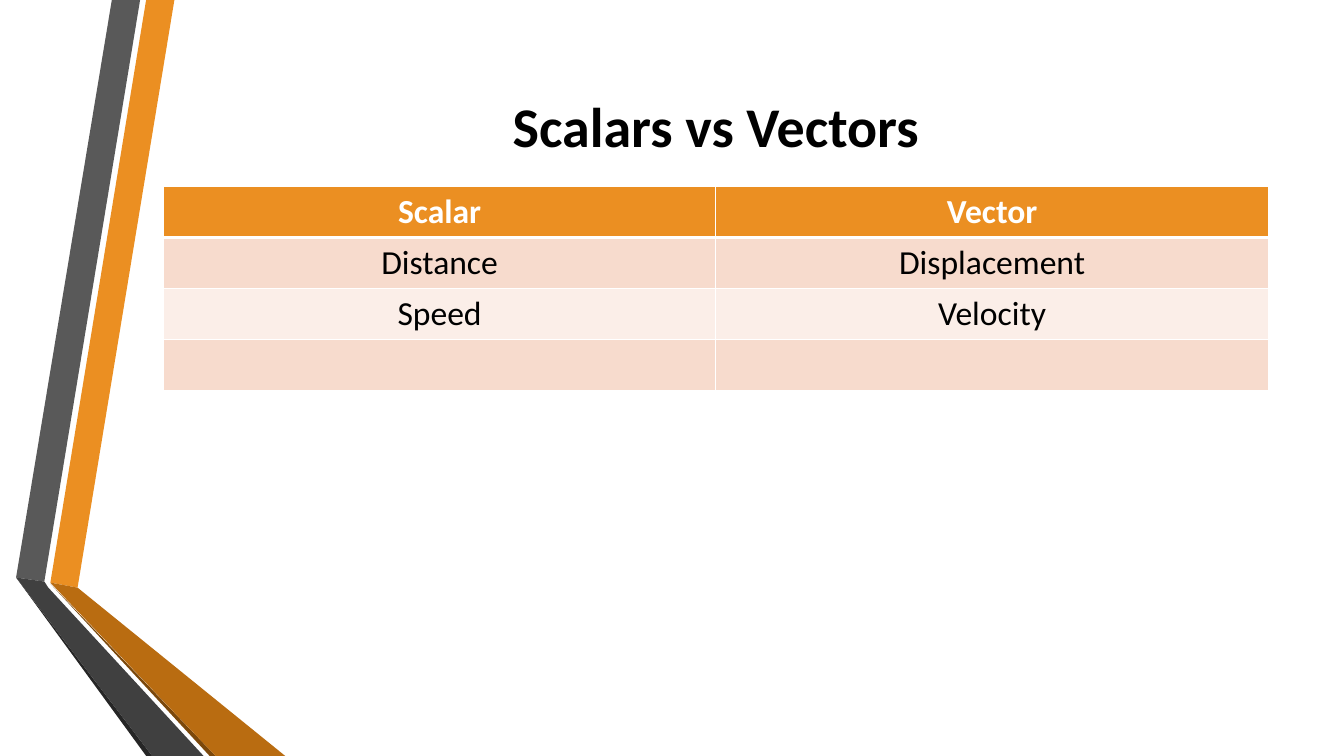
from dataclasses import dataclass

from lxml.etree import SubElement
from pptx import Presentation
from pptx.dml.color import RGBColor
from pptx.enum.text import MSO_ANCHOR, MSO_AUTO_SIZE, PP_ALIGN
from pptx.oxml.ns import qn
from pptx.util import Pt

SCALE = 9144
PAGE_SIZE = (1333, 750)
RIBBON_BOX = (16, 0)
TITLE_BOX = (162, 75, 1096, 98)
TABLE_BOX = (162, 185, 1096, 200)


@dataclass(frozen=True)
class Theme:
    """Colours, typeface and type sizes of the slide."""

    face: str = "Calibri"
    title_size: int = 40
    table_size: int = 24
    ink: str = "000000"
    paper: str = "FFFFFF"
    orange: str = "EB8F22"
    orange_shade: str = "B96C11"
    orange_edge: str = "7B480B"
    grey: str = "595959"
    grey_shade: str = "404040"
    grey_edge: str = "262626"
    bands: tuple = ("F7DBCD", "FBEEE8")


THEME = Theme()

RIBBONS = [
    (THEME.orange, [(34, 578), (61, 583), (157, 0), (129, 0)]),
    (THEME.grey, [(123, 0), (95, 0), (0, 573), (28, 577)]),
    (THEME.grey_edge, [(0, 573), (129, 750), (135, 750)]),
    (THEME.orange_edge, [(34, 579), (192, 750), (198, 750)]),
    (THEME.orange_shade, [(34, 578), (198, 750), (267, 750), (61, 583)]),
    (THEME.grey_shade, [(186, 750), (32, 583), (28, 577), (0, 573), (135, 750)]),
]

ROWS = [
    ("Scalar", "Vector"),
    ("Distance", "Displacement"),
    ("Speed", "Velocity"),
    ("", ""),
]


def px(length):
    """Turn whole pixels into EMU."""
    return length * SCALE


def paint(fill, colour):
    """Give a fill one solid colour."""
    fill.solid()
    fill.fore_color.rgb = RGBColor.from_string(colour)


def write(frame, text, size, colour, bold):
    """Write one centred line of text into a frame."""
    para = frame.paragraphs[0]
    para.alignment = PP_ALIGN.CENTER
    if not text:
        return
    span = para.add_run()
    span.text = text
    formats = {"name": THEME.face, "size": Pt(size), "bold": bold}
    for name, value in formats.items():
        setattr(span.font, name, value)
    span.font.color.rgb = RGBColor.from_string(colour)


def draw_ribbons(page, box):
    """Draw the two folded ribbons from the top left of the box."""
    left, top = box
    for colour, points in RIBBONS:
        builder = page.shapes.build_freeform(*points[0], scale=SCALE)
        builder.add_line_segments(points[1:], close=True)
        ribbon = builder.convert_to_shape(px(left), px(top))
        ribbon.shadow.inherit = False
        paint(ribbon.fill, colour)
        ribbon.line.fill.background()


def place_title(page, box, text):
    """Move the title placeholder to the box and fill it."""
    title = page.shapes.title
    for name, length in zip(("left", "top", "width", "height"), box):
        setattr(title, name, px(length))
    frame = title.text_frame
    formats = {
        "word_wrap": True,
        "auto_size": MSO_AUTO_SIZE.NONE,
        "vertical_anchor": MSO_ANCHOR.MIDDLE,
    }
    for name, value in formats.items():
        setattr(frame, name, value)
    write(frame, text, THEME.title_size, THEME.ink, True)


def border_cell(cell, widths):
    """Add white borders with a width in points for each side."""
    properties = cell._tc.get_or_add_tcPr()
    for side, width in widths.items():
        line = SubElement(properties, qn(f"a:ln{side}"), w=str(Pt(width)))
        solid = SubElement(line, qn("a:solidFill"))
        SubElement(solid, qn("a:srgbClr"), val=THEME.paper)


def place_table(page, box, rows):
    """Fill the box with a header row and banded body rows."""
    left, top, width, height = map(px, box)
    table = page.shapes.add_table(
        len(rows), len(rows[0]), left, top, width, height
    ).table
    for row, texts in enumerate(rows):
        header = row == 0
        fill = THEME.orange if header else THEME.bands[(row - 1) % 2]
        colour = THEME.paper if header else THEME.ink
        widths = {"L": 1, "R": 1, "T": 3 if row == 1 else 1, "B": 3 if header else 1}
        for column, text in enumerate(texts):
            cell = table.cell(row, column)
            border_cell(cell, widths)
            paint(cell.fill, fill)
            write(cell.text_frame, text, THEME.table_size, colour, header)


def main():
    """Build the slide and save the deck."""
    deck = Presentation()
    deck.slide_width, deck.slide_height = map(px, PAGE_SIZE)
    page = deck.slides.add_slide(deck.slide_layouts.get_by_name("Title Only"))
    paint(page.background.fill, THEME.paper)
    draw_ribbons(page, RIBBON_BOX)
    place_title(page, TITLE_BOX, "Scalars vs Vectors")
    place_table(page, TABLE_BOX, ROWS)
    deck.save("out.pptx")


if __name__ == "__main__":
    main()
